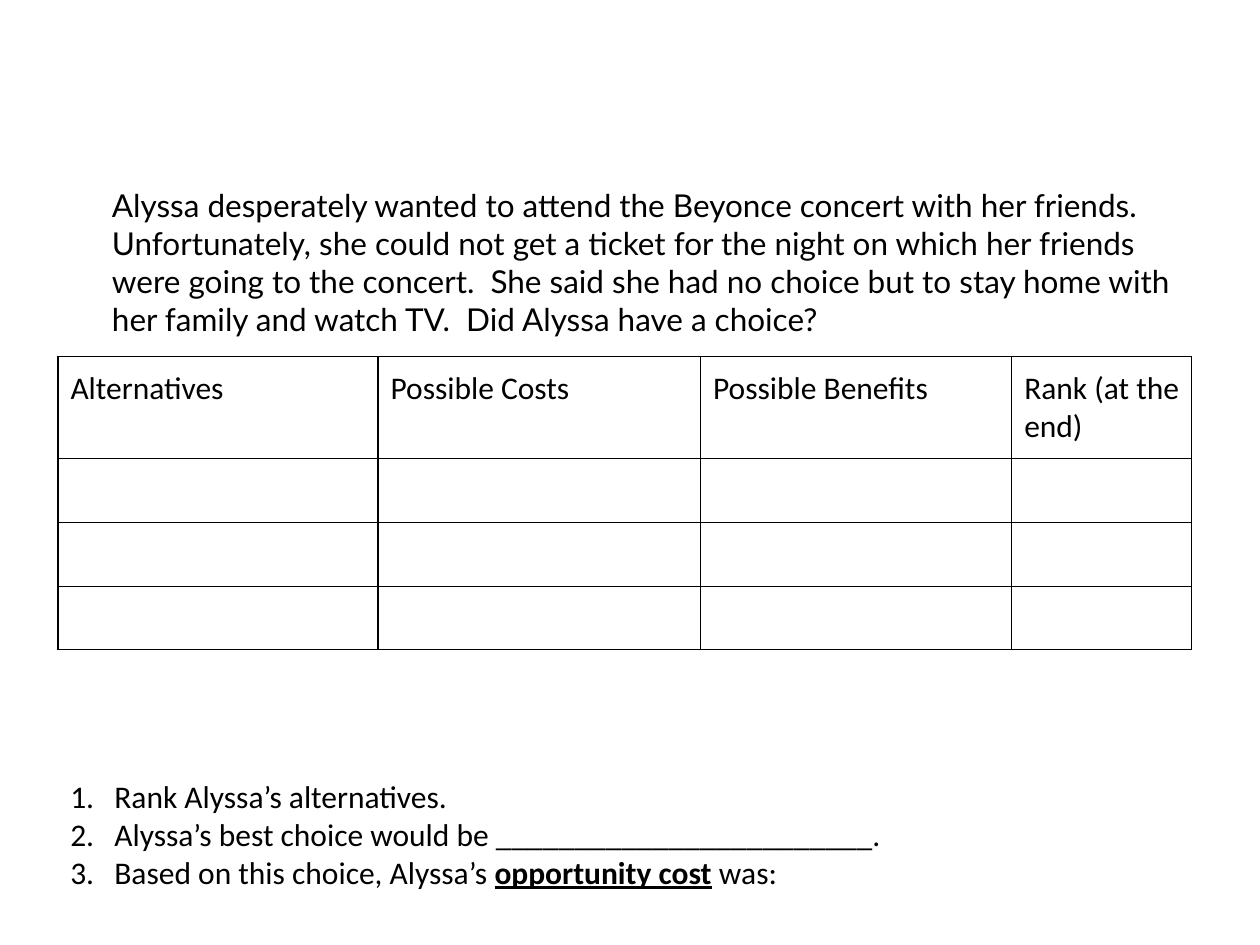
from lxml import etree
from pptx import Presentation
from pptx.dml.color import RGBColor
from pptx.oxml.ns import qn
from pptx.util import Inches, Pt

BLACK = RGBColor(0x00, 0x00, 0x00)
SLIDE_WIDTH, SLIDE_HEIGHT = 10, 7.5
BODY_FONT, STORY_FONT = "Calibri", "Lato"
TEXT_SIZE = 18
CELL_INSET = 0.1
BORDER_WIDTH = 0.75

STORY = (
    "Alyssa desperately wanted to attend the Beyonce concert with her friends.  "
    "Unfortunately, she could not get a ticket for the night on which her friends "
    "were going to the concert.  She said she had no choice but to stay home with "
    "her family and watch TV.  Did Alyssa have a choice?"
)
HEADINGS = ["Alternatives", "Possible Costs", "Possible Benefits", "Rank (at the end)"]
COLUMN_WIDTHS = [2.54, 2.56, 2.47, 1.43]
HEADER_HEIGHT, ROW_HEIGHT = 0.81, 0.5
BLANK_ROWS = 3
# Each task is a list of (text, format) spans
TASKS = [
    [("Rank Alyssa’s alternatives.", {})],
    [("Alyssa’s best choice would be ________________________.", {})],
    [
        ("Based on this choice, Alyssa’s ", {}),
        ("opportunity cost", {"bold": True, "underline": True}),
        (" was:", {}),
    ],
]


def add_span(para, text, font=BODY_FONT, size=TEXT_SIZE, color=BLACK,
             bold=False, underline=False):
    span = para.add_run()
    span.text = text
    span.font.name = font
    span.font.size = Pt(size)
    span.font.color.rgb = color
    span.font.bold = bold
    span.font.underline = underline


def add_frame(slide, box):
    frame = slide.shapes.add_textbox(*map(Inches, box)).text_frame
    frame.word_wrap = True
    return frame


def number_para(para, indent=0.5, hanging=0.35):
    props = para._p.get_or_add_pPr()
    props.set("marL", str(Inches(indent)))
    props.set("indent", str(-Inches(hanging)))
    font = etree.SubElement(props, qn("a:buFont"))
    font.set("typeface", BODY_FONT)
    etree.SubElement(props, qn("a:buAutoNum")).set("type", "arabicPeriod")


def outline_cell(cell):
    props = cell._tc.get_or_add_tcPr()
    for position, side in enumerate(("lnL", "lnR", "lnT", "lnB")):
        line = etree.Element(qn(f"a:{side}"), w=str(Pt(BORDER_WIDTH)))
        fill = etree.SubElement(line, qn("a:solidFill"))
        etree.SubElement(fill, qn("a:srgbClr")).set("val", str(BLACK))
        props.insert(position, line)


def add_story(slide, box):
    add_span(add_frame(slide, box).paragraphs[0], STORY, font=STORY_FONT)


def add_choice_table(slide, box):
    table = slide.shapes.add_table(
        BLANK_ROWS + 1, len(HEADINGS), *map(Inches, box)).table
    table.first_row = table.horz_banding = False
    for column, width in zip(table.columns, COLUMN_WIDTHS):
        column.width = Inches(width)
    for index, row in enumerate(table.rows):
        row.height = Inches(ROW_HEIGHT if index else HEADER_HEIGHT)
    for cell in table.iter_cells():
        cell.fill.background()
        cell.margin_left = cell.margin_right = Inches(CELL_INSET)
        cell.margin_top = cell.margin_bottom = Inches(CELL_INSET)
        outline_cell(cell)
    for cell, heading in zip(table.rows[0].cells, HEADINGS):
        add_span(cell.text_frame.paragraphs[0], heading)


def add_tasks(slide, box):
    frame = add_frame(slide, box)
    for index, spans in enumerate(TASKS):
        para = frame.add_paragraph() if index else frame.paragraphs[0]
        number_para(para)
        for text, style in spans:
            add_span(para, text, **style)


def main():
    deck = Presentation()
    deck.slide_width, deck.slide_height = Inches(SLIDE_WIDTH), Inches(SLIDE_HEIGHT)
    page = deck.slides.add_slide(deck.slide_layouts[6])
    # Choice table, then the story above it and the tasks below
    table_height = HEADER_HEIGHT + BLANK_ROWS * ROW_HEIGHT
    add_choice_table(page, (0.46, 2.83, sum(COLUMN_WIDTHS), table_height))
    add_story(page, (0.79, 1.43, 8.75, 1.31))
    add_tasks(page, (0.31, 6.12, 9.07, 1.01))
    deck.save("out.pptx")


if __name__ == "__main__":
    main()
